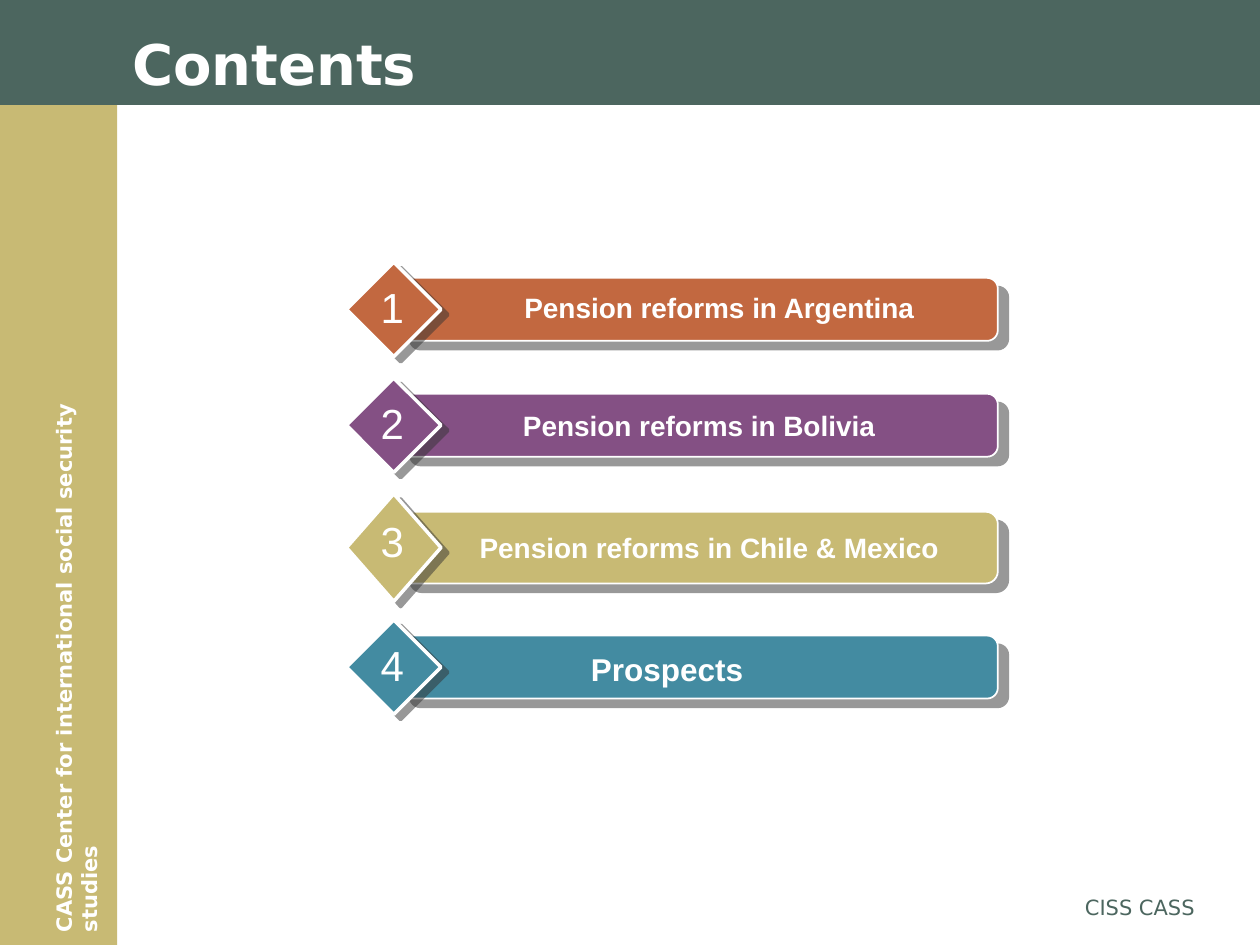
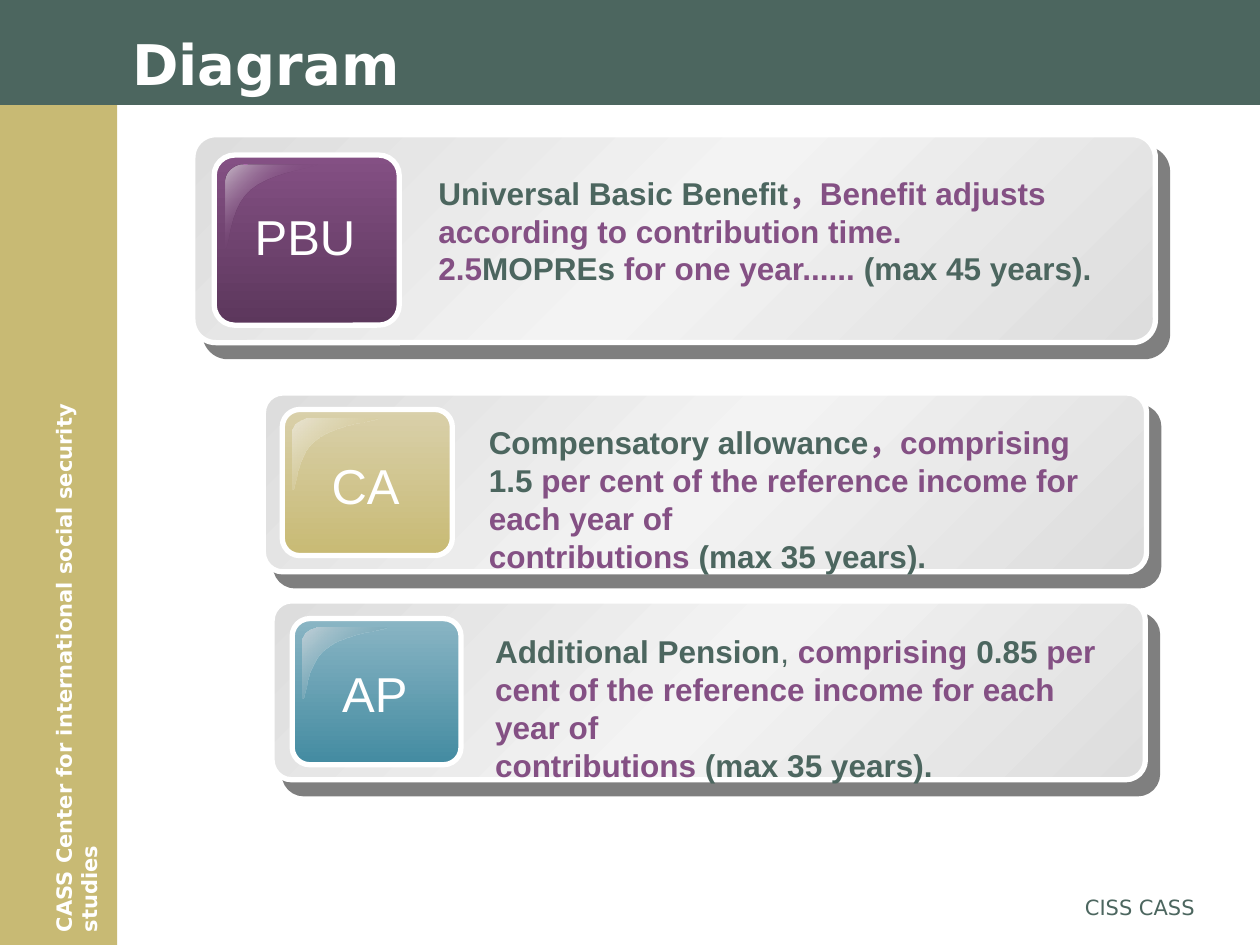
"""Builds the contents and diagram slides of a pension reform presentation."""
from dataclasses import dataclass
from typing import NamedTuple, Optional

from lxml import etree
from pptx import Presentation
from pptx.dml.color import RGBColor
from pptx.enum import shapes, text
from pptx.oxml import ns
from pptx.util import Pt

WHITE = RGBColor(0xFF, 0xFF, 0xFF)
BLACK = RGBColor(0x00, 0x00, 0x00)
CHARCOAL = RGBColor(0x33, 0x33, 0x33)
GREEN = RGBColor(0x4C, 0x66, 0x5F)
SAND = RGBColor(0xC8, 0xBA, 0x74)
RUST = RGBColor(0xC2, 0x68, 0x40)
PURPLE = RGBColor(0x84, 0x50, 0x84)
TEAL = RGBColor(0x43, 0x8B, 0xA1)
DARK_PURPLE = RGBColor(0x5C, 0x37, 0x5C)
LIGHT_SAND = RGBColor(0xD9, 0xD0, 0xAA)
LIGHT_TEAL = RGBColor(0x8A, 0xB5, 0xC4)
PALE_PURPLE = RGBColor(0xC8, 0xBB, 0xC8)
PALE_SAND = RGBColor(0xEA, 0xE5, 0xD3)
PALE_TEAL = RGBColor(0xC2, 0xD1, 0xD8)
CARD_EDGE = RGBColor(0xDD, 0xDD, 0xDD)
CARD_MIDDLE = RGBColor(0xF3, 0xF3, 0xF3)

HEADING_FONT = "DejaVu Sans"
BODY_FONT = "Arial"
LEFT, CENTER, RIGHT = text.PP_ALIGN.LEFT, text.PP_ALIGN.CENTER, text.PP_ALIGN.RIGHT
ROUNDED = shapes.MSO_SHAPE.ROUNDED_RECTANGLE

GLOSS_START = (0.2, 0)
GLOSS_CURVES = (
    ((0.2, 0), (0.1, 0), (0, 0.09), (0, 0.2)),
    ((0, 0.98), (0.05, 1), (0.03, 0.51), (0.28, 0.29)),
    ((0.28, 0.29), (0.53, 0.07), (1.02, 0.04), (1, 0)),
)
CURVE_STEPS = 10


class Box(NamedTuple):
    """A rectangle in points."""
    left: float
    top: float
    width: float
    height: float

    def lengths(self) -> list:
        """Return the rectangle as lengths."""
        return [Pt(value) for value in self]


class Run(NamedTuple):
    """A piece of text with its colour and weight."""
    words: str
    color: RGBColor = WHITE
    bold: bool = False


class Stop(NamedTuple):
    """A gradient stop with position and opacity in percent."""
    position: int
    color: RGBColor
    opacity: int = 100


class Shadow(NamedTuple):
    """A hard shadow, half transparent."""
    color: RGBColor
    distance: float
    angle: int


BAR_SHADOW = Shadow(CHARCOAL, 7.8, 40)
DIAMOND_SHADOW = Shadow(CHARCOAL, 5, 37)
CARD_SHADOW = Shadow(BLACK, 10.6, 49)


@dataclass
class Topic:
    """A numbered bar of the contents list."""
    title: str
    color: RGBColor
    top: float
    label: Box
    size: int = 16
    bar_height: float = 36


@dataclass
class Benefit:
    """A card with a glossy tile and an explanation."""
    name: str
    card: Box
    tile: Box
    name_top: float
    explanation: Box
    tile_colors: tuple
    gloss: list
    paragraphs: list


def sized_text(lead: list, rate: Run) -> list:
    """Return the paragraphs shared by the benefits paid per year."""
    return [
        [*lead, rate, Run(" per cent of the reference income for each year of", PURPLE, True)],
        [Run("contributions", PURPLE, True), Run(" (max 35 years).", GREEN, True)],
    ]


TOPICS = [
    Topic("Pension reforms in Argentina", RUST, 149.8, Box(246.2, 162.7, 329.8, 26.6)),
    Topic("Pension reforms in Bolivia", PURPLE, 216, Box(246.2, 229.7, 306.7, 26.6)),
    Topic("Pension reforms in Chile & Mexico", SAND, 282.2,
          Box(252, 299.5, 306.7, 26.6), bar_height=41),
    Topic("Prospects", TEAL, 354.2, Box(246.2, 367.9, 270, 28.8), size=18),
]

BENEFITS = [
    Benefit("PBU", Box(110.2, 77, 550, 118.8), Box(122.4, 88.6, 105.8, 97.2), 114.5,
            Box(243.4, 95.8, 403.9, 72), (PURPLE, DARK_PURPLE),
            [Stop(0, PALE_PURPLE), Stop(50, PURPLE, 0), Stop(100, PALE_PURPLE)],
            [[Run("Universal Basic Benefit", GREEN, True),
              Run("，Benefit adjusts according to contribution time.", PURPLE, True)],
             [Run("2.5", PURPLE, True), Run("MOPREs ", GREEN, True),
              Run("for one year...... ", PURPLE, True), Run("(max 45 years).", GREEN, True)]]),
    Benefit("CA", Box(150.5, 224.6, 504.7, 102.2), Box(161.3, 234, 97.2, 83.5), 257,
            Box(272.2, 238.3, 370.8, 93.6), (LIGHT_SAND, SAND),
            [Stop(0, PALE_SAND), Stop(100, SAND, 0)],
            sized_text([Run("Compensatory allowance", GREEN, True),
                        Run("，comprising ", PURPLE, True)], Run("1.5", GREEN, True))),
    Benefit("AP", Box(155.5, 343.4, 499, 102.2), Box(167, 353.5, 96.5, 83.5), 375.8,
            Box(275.8, 357.8, 366.5, 93.6), (LIGHT_TEAL, TEAL),
            [Stop(0, PALE_TEAL), Stop(100, TEAL, 0)],
            sized_text([Run("Additional Pension", GREEN, True), Run(", ", GREEN),
                        Run("comprising ", PURPLE, True)], Run("0.85", GREEN, True))),
]


def add_child(parent, tag: str, **attributes):
    """Append a drawing element to its parent."""
    values = {key: str(value) for key, value in attributes.items()}
    return etree.SubElement(parent, ns.qn(tag), values)


def add_color(parent, color: RGBColor, opacity: int) -> None:
    """Append a colour with its opacity."""
    element = add_child(parent, "a:srgbClr", val=color)
    if opacity < 100:
        add_child(element, "a:alpha", val=opacity * 1000)


def set_gradient(shape, stops: list, angle: int) -> None:
    """Fill a shape with a linear gradient."""
    shape.fill.gradient()
    gradient = shape.element.spPr.find(ns.qn("a:gradFill"))
    gradient.clear()
    stop_list = add_child(gradient, "a:gsLst")
    for stop in stops:
        add_color(add_child(stop_list, "a:gs", pos=stop.position * 1000), stop.color, stop.opacity)
    add_child(gradient, "a:lin", ang=angle * 60000, scaled=0)


def set_shadow(shape, shadow: Shadow) -> None:
    """Give a shape a hard offset shadow."""
    effects = shape.element.spPr.find(ns.qn("a:effectLst"))
    outer = add_child(effects, "a:outerShdw", blurRad=0, dist=Pt(shadow.distance),
                      dir=shadow.angle * 60000, algn="ctr", rotWithShape=0)
    add_color(outer, shadow.color, 50)


def add_preset(container, kind, box: Box, color: Optional[RGBColor] = None, line: float = 0,
               shadow: Optional[Shadow] = None, corner: Optional[float] = None):
    """Draw a preset shape with an optional white outline and shadow."""
    shape = container.add_shape(kind, *box.lengths())
    shape.shadow.inherit = False
    if color is not None:
        shape.fill.solid()
        shape.fill.fore_color.rgb = color
    if line:
        shape.line.color.rgb = WHITE
        shape.line.width = Pt(line)
    else:
        shape.line.fill.background()
    if shadow:
        set_shadow(shape, shadow)
    if corner is not None:
        shape.adjustments[0] = corner
    return shape


def add_text(container, box: Box, paragraphs: list, size: int, font: str = BODY_FONT,
             alignment=LEFT, wrap: bool = True, anchor=text.MSO_ANCHOR.TOP):
    """Write paragraphs of runs in a text box."""
    shape = container.add_textbox(*box.lengths())
    frame = shape.text_frame
    frame.word_wrap = wrap
    frame.vertical_anchor = anchor
    for index, runs in enumerate(paragraphs):
        paragraph = frame.paragraphs[0] if index == 0 else frame.add_paragraph()
        paragraph.alignment = alignment
        for item in runs:
            run = paragraph.add_run()
            run.text = item.words
            for key, value in {"name": font, "size": Pt(size), "bold": item.bold}.items():
                setattr(run.font, key, value)
            run.font.color.rgb = item.color
    return shape


def add_gloss(container, tile: Box, stops: list) -> None:
    """Draw the curved highlight in the corner of a tile."""
    def place(x: float, y: float) -> tuple:
        return (Pt(tile.left + tile.width * (0.06 + x / 2)),
                Pt(tile.top + tile.height * (0.06 + y / 2)))

    points = []
    for curve in GLOSS_CURVES:
        for step in range(CURVE_STEPS + 1):
            t = step / CURVE_STEPS
            weights = ((1 - t) ** 3, 3 * t * (1 - t) ** 2, 3 * t * t * (1 - t), t ** 3)
            points.append(place(*(sum(w * p[axis] for w, p in zip(weights, curve))
                                  for axis in (0, 1))))
    builder = container.build_freeform(*place(*GLOSS_START))
    builder.add_line_segments(points, close=True)
    gloss = builder.convert_to_shape()
    gloss.shadow.inherit = False
    gloss.line.fill.background()
    set_gradient(gloss, stops, 45)


def add_framed_slide(presentation, title: str):
    """Add a slide with bands, title, side caption and footer."""
    container = presentation.slides.add_slide(presentation.slide_layouts[6]).shapes
    add_preset(container, shapes.MSO_SHAPE.RECTANGLE, Box(0, 0, 720, 60), GREEN)
    add_preset(container, shapes.MSO_SHAPE.RECTANGLE, Box(0, 60, 67, 480), SAND)
    caption = Run("CASS Center for international social security studies", WHITE, True)
    side = add_text(container, Box(-146.9, 345.6, 366.5, 21.6), [[caption]], 12, HEADING_FONT)
    side.rotation = 270
    add_text(container, Box(491.8, 507.6, 198, 25.2), [[Run("CISS CASS", GREEN)]], 12,
             HEADING_FONT, RIGHT)
    add_text(container, Box(68.4, 13.7, 581.8, 44.6), [[Run(title, WHITE, True)]], 32,
             HEADING_FONT, anchor=text.MSO_ANCHOR.MIDDLE)
    return container


def add_topic(container, number: int, topic: Topic) -> None:
    """Draw a numbered diamond and its titled bar."""
    group = container.add_group_shape().shapes
    height = topic.bar_height
    bar_top = topic.top + height / 4
    add_preset(group, ROUNDED, Box(228.2, bar_top, 342, height), topic.color, 1, BAR_SHADOW, 0.17)
    add_preset(group, shapes.MSO_SHAPE.DIAMOND, Box(198, topic.top, 54, height * 1.5),
               topic.color, 2, DIAMOND_SHADOW)
    add_text(group, topic.label, [[Run(topic.title, WHITE, True)]], topic.size, alignment=CENTER)
    add_text(group, Box(210.2, bar_top - 1.5, 28, 36), [[Run(str(number))]], 24,
             alignment=CENTER, wrap=False)


def add_benefit(container, benefit: Benefit) -> None:
    """Draw a card with its tile, name and explanation."""
    group = container.add_group_shape().shapes
    card = add_preset(group, ROUNDED, benefit.card, line=3, shadow=CARD_SHADOW, corner=0.11)
    set_gradient(card, [Stop(0, CARD_EDGE), Stop(50, CARD_MIDDLE), Stop(100, CARD_EDGE)], 45)
    tile = add_preset(group, ROUNDED, benefit.tile, line=3, corner=0.12)
    first, last = benefit.tile_colors
    set_gradient(tile, [Stop(0, first), Stop(100, last)], 90)
    add_gloss(group, benefit.tile, benefit.gloss)
    name_left = benefit.tile.left + benefit.tile.width / 2 - 37
    add_text(group, Box(name_left, benefit.name_top, 72, 41), [[Run(benefit.name)]], 28,
             alignment=CENTER, wrap=False)
    add_text(group, benefit.explanation, benefit.paragraphs, 18)


def main() -> None:
    """Build and save both slides."""
    presentation = Presentation()
    presentation.slide_width, presentation.slide_height = Pt(720), Pt(540)
    contents = add_framed_slide(presentation, "Contents")
    for number, topic in enumerate(TOPICS, 1):
        add_topic(contents, number, topic)
    diagram = add_framed_slide(presentation, "Diagram")
    for benefit in BENEFITS:
        add_benefit(diagram, benefit)
    presentation.save("out.pptx")


if __name__ == "__main__":
    main()
